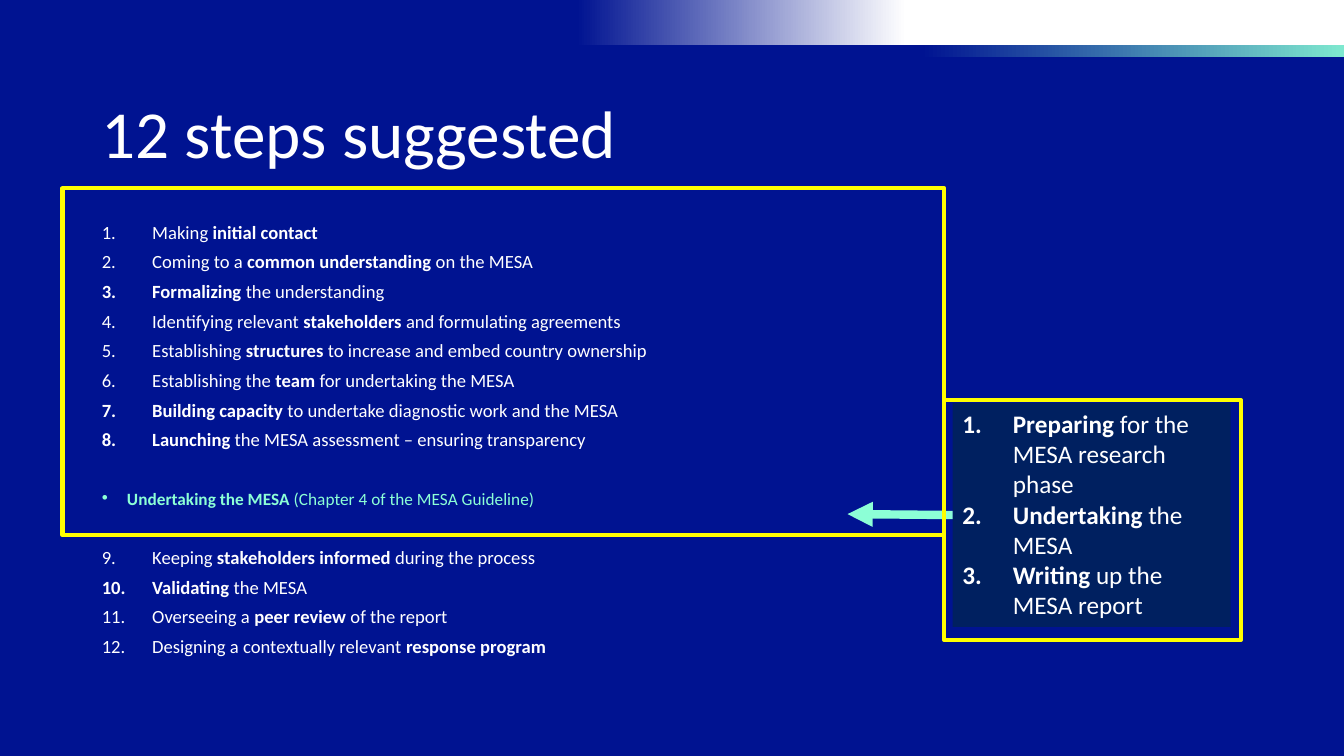
from lxml.etree import SubElement
from pptx import Presentation
from pptx.dml.color import RGBColor
from pptx.enum.shapes import MSO_CONNECTOR, MSO_SHAPE
from pptx.enum.text import MSO_ANCHOR, MSO_AUTO_SIZE, PP_ALIGN
from pptx.oxml.ns import qn
from pptx.util import Pt

COLORS = {"blue": "001391", "navy": "002060", "mint": "8CFFD6",
          "mint_end": "7EE8CF", "white": "FFFFFF", "yellow": "FFFF00"}
FONT = "Calibri"

# Text between ** marks is bold
FIRST_STEPS = [
    "Making **initial contact**",
    "Coming to a **common understanding** on the MESA",
    "**Formalizing** the understanding",
    "Identifying relevant **stakeholders** and formulating agreements",
    "Establishing **structures** to increase and embed country ownership",
    "Establishing the **team** for undertaking the MESA",
    "**Building capacity** to undertake diagnostic work and the MESA",
    "**Launching** the MESA assessment – ensuring transparency",
]
CHAPTER = "**Undertaking the MESA** (Chapter 4 of the MESA Guideline)"
LAST_STEPS = [
    "Keeping **stakeholders informed** during the process",
    "**Validating** the MESA",
    "Overseeing a **peer review** of the report",
    "Designing a contextually relevant **response program**",
]
PHASES = [
    "**Preparing** for the MESA research phase",
    "**Undertaking** the MESA",
    "**Writing** up the MESA report",
]


def rgb(name):
    return RGBColor.from_string(COLORS[name])


def apply(target, formats):
    for name, value in formats.items():
        setattr(target, name, value)


def place(sp, box):
    names = ("left", "top", "width", "height")
    apply(sp, {n: Pt(v) for n, v in zip(names, box)})


def setup_text(sp, anchor):
    tf = sp.text_frame
    apply(tf, {"word_wrap": True, "auto_size": MSO_AUTO_SIZE.NONE,
               "vertical_anchor": anchor})
    return tf


def add_runs(p, text, size, color="white"):
    for i, part in enumerate(text.split("**")):
        if part:
            r = p.add_run()
            r.text = part
            apply(r.font, {"name": FONT, "size": Pt(size), "bold": i % 2 == 1})
            r.font.color.rgb = rgb(color)


def set_bullet(p, indent, start=None):
    pPr = p._p.get_or_add_pPr()
    pPr.set("marL", str(Pt(indent)))
    pPr.set("indent", str(-Pt(indent)))
    SubElement(pPr, qn("a:buFont"), typeface=FONT if start else "Arial")
    if start:
        SubElement(pPr, qn("a:buAutoNum"), type="arabicPeriod", startAt=str(start))
    else:
        SubElement(pPr, qn("a:buChar"), char="•")


def add_rect(s, box, fill=None, line=None):
    sp = s.shapes.add_shape(MSO_SHAPE.RECTANGLE, *map(Pt, box))
    sp.shadow.inherit = False
    if fill:
        sp.fill.solid()
        sp.fill.fore_color.rgb = rgb(fill)
    else:
        sp.fill.background()
    if line:
        sp.line.color.rgb = rgb(line)
        sp.line.width = Pt(3)
    else:
        sp.line.fill.background()
    return sp


def add_top_bands(s, box):
    # Each band fades from the background to its end colour
    left, top, width, height = box
    for x, y, end, stop in ((658, 8.6, "mint_end", 1), (412, 0, "white", 0.43)):
        sp = add_rect(s, (left + x, top + y, width - x, height))
        sp.fill.gradient()
        sp.fill.gradient_angle = 0
        stops = sp.fill.gradient_stops
        for gs, color, position in zip(stops, ("blue", end), (0, stop)):
            gs.color.rgb = rgb(color)
            gs.position = position


def add_title(s, box):
    sp = s.shapes.title
    place(sp, box)
    p = setup_text(sp, MSO_ANCHOR.MIDDLE).paragraphs[0]
    apply(p, {"alignment": PP_ALIGN.LEFT, "line_spacing": 0.9})
    add_runs(p, "12 steps suggested", 48)


def add_steps(s, box):
    sp = s.placeholders[1]
    place(sp, box)
    tf = setup_text(sp, MSO_ANCHOR.TOP)
    # Text, size, colour, indent, first number, space before
    rows = [(t, 13.3, "white", 36, 1, 10) for t in FIRST_STEPS]
    rows.append((CHAPTER, 12.3, "mint", 18, None, 31.3))
    rows += [(t, 13.3, "white", 36, 9, 10 if i else 31.3)
             for i, t in enumerate(LAST_STEPS)]
    for i, (text, size, color, indent, start, gap) in enumerate(rows):
        p = tf.add_paragraph() if i else tf.paragraphs[0]
        set_bullet(p, indent, start)
        apply(p, {"line_spacing": 0.7, "space_before": Pt(gap if i else 0),
                  "space_after": Pt(0)})
        add_runs(p, text, size, color)


def add_phases(s, box):
    left, top, width, height = box
    tf = setup_text(add_rect(s, box, fill="navy"), MSO_ANCHOR.TOP)
    for i, text in enumerate(PHASES):
        p = tf.paragraphs[0] if i == 0 else tf.add_paragraph()
        set_bullet(p, 36, 1)
        p.alignment = PP_ALIGN.LEFT
        add_runs(p, text, 18)

    # Arrow back to the chapter line
    y = top + height / 2
    cx = s.shapes.add_connector(MSO_CONNECTOR.STRAIGHT, Pt(left), Pt(y),
                                Pt(left - 75), Pt(y - 0.7))
    cx.line.color.rgb = rgb("mint")
    cx.line.width = Pt(6)
    SubElement(cx.line._get_or_add_ln(), qn("a:tailEnd"), type="triangle")
    SubElement(cx._element.spPr, qn("a:effectLst"))


def add_frames(s, boxes):
    for box in boxes:
        add_rect(s, box, line="yellow")


def main():
    prs = Presentation()
    prs.slide_width, prs.slide_height = Pt(960), Pt(540)
    s = prs.slides.add_slide(prs.slide_layouts[1])
    s.background.fill.solid()
    s.background.fill.fore_color.rgb = rgb("blue")

    add_top_bands(s, (0, 0, 960, 32.4))
    add_title(s, (65.5, 49, 456, 97))
    add_steps(s, (65.5, 158.4, 805.7, 316))
    add_phases(s, (680.4, 288, 198.7, 159.8))
    add_frames(s, [(674.6, 285.8, 211.7, 171.4), (44.6, 134.6, 630, 247.7)])
    prs.save("out.pptx")


if __name__ == "__main__":
    main()
